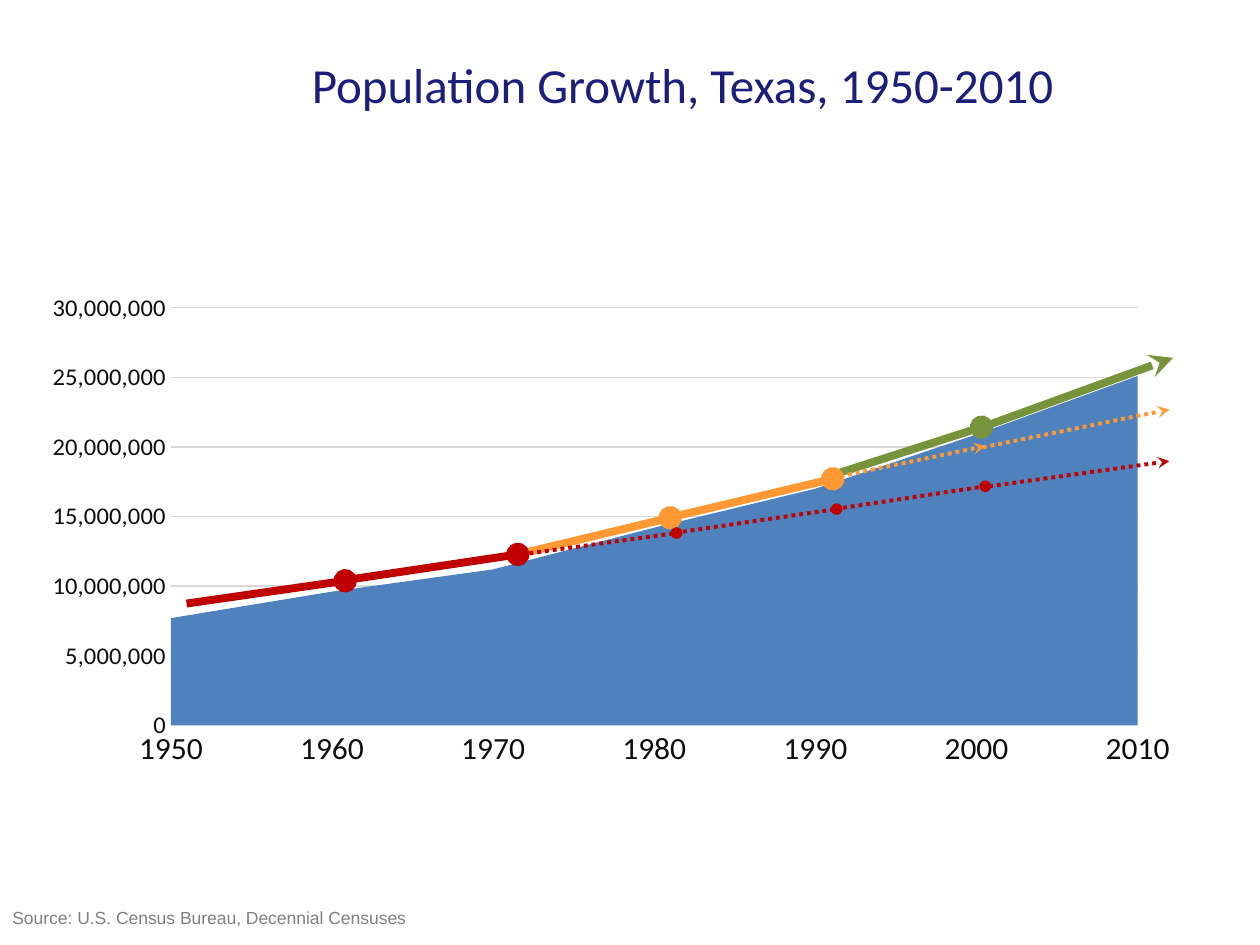
"""Build the Texas population growth slide with its area chart and trend lines."""
import pptx
import pptx.chart.data
import pptx.dml.color
import pptx.enum.chart
import pptx.enum.dml
import pptx.enum.shapes
import pptx.enum.text
import pptx.oxml
import pptx.oxml.ns
import pptx.util

Pt = pptx.util.Pt

TITLE = "Population Growth, Texas, 1950-2010"
SOURCE = "Source: U.S. Census Bureau, Decennial Censuses"
POPULATION = {
    "1950": 7700000, "1960": 9600000, "1970": 11200000, "1980": 14200000,
    "1990": 17000000, "2000": 20900000, "2010": 25100000,
}
PLOT_AREA = {"x": 0.104, "y": 0.049, "w": 0.853, "h": 0.885}
RED, ORANGE, GREEN = "C00000", "FF9933", "77933C"
GRID, AXIS_TEXT = "D9D9D9", "0D0D0D"
ACTUAL = {"width": Pt(4.5)}
PROJECTED = {"width": Pt(2.25), "dash_style": pptx.enum.dml.MSO_LINE.ROUND_DOT}
TRENDS = [
    (RED, ACTUAL, "oval", (106.6, 344.9), (197.3, 331.9)),
    (ORANGE, ACTUAL, "oval", (295.9, 316.8), (383, 295.9)),
    (RED, ACTUAL, "oval", (199.4, 331.2), (295.9, 316.8)),
    (GREEN, ACTUAL, "oval", (475.9, 271.4), (560.9, 244.1)),
    (ORANGE, ACTUAL, "oval", (388.1, 294.5), (475.9, 273.6)),
    (GREEN, ACTUAL, "stealth", (559.4, 244.8), (670.3, 204.5)),
    (RED, PROJECTED, "oval", (298.1, 316.8), (386.6, 304.6)),
    (RED, PROJECTED, "oval", (390.2, 303.8), (478.1, 290.9)),
    (RED, PROJECTED, "oval", (481.7, 290.2), (563, 277.9)),
    (RED, PROJECTED, "stealth", (565.2, 277.9), (668.2, 263.5)),
    (ORANGE, PROJECTED, "stealth", (480.2, 272.2), (563, 254.9)),
    (ORANGE, PROJECTED, "stealth", (561.6, 255.6), (668.2, 234)),
]


def apply(target, values):
    for attribute, value in values.items():
        setattr(target, attribute, value)


def paint(color_holder, color):
    color_holder.rgb = pptx.dml.color.RGBColor.from_string(color)


def style_font(font, name, size, color):
    apply(font, {"name": name, "size": Pt(size), "bold": False})
    paint(font.color, color)


def place(shape, left, top, width, height):
    apply(shape, {"left": Pt(left), "top": Pt(top), "width": Pt(width), "height": Pt(height)})


def style_line(line, color, values):
    line.fill.solid()
    paint(line.fill.fore_color, color)
    apply(line, values)


def add_title(slide):
    title = slide.shapes.title
    place(title, 120, 24, 540, 48)
    title.text_frame.text = TITLE
    title.text_frame.vertical_anchor = pptx.enum.text.MSO_ANCHOR.MIDDLE
    heading = title.text_frame.paragraphs[0]
    heading.alignment = pptx.enum.text.PP_ALIGN.CENTER
    style_font(heading.runs[0].font, "Calibri", 28, "1B1E7A")


def set_plot_area(chart):
    sizes = "".join(f'<c:{key} val="{value}"/>' for key, value in PLOT_AREA.items())
    layout = pptx.oxml.parse_xml(
        f'<c:layout {pptx.oxml.ns.nsdecls("c")}><c:manualLayout><c:layoutTarget val="inner"/>'
        f'<c:xMode val="edge"/><c:yMode val="edge"/>{sizes}</c:manualLayout></c:layout>')
    plot_area = chart._chartSpace.chart.plotArea
    for default in plot_area.findall(pptx.oxml.ns.qn("c:layout")):
        plot_area.remove(default)
    plot_area.insert(0, layout)
    for crossing in plot_area.iter(pptx.oxml.ns.qn("c:crossBetween")):
        crossing.set("val", "midCat")


def add_population_chart(slide):
    data = pptx.chart.data.CategoryChartData(number_format="#,##0")
    data.categories = list(POPULATION)
    data.add_series("Series 1", list(POPULATION.values()))
    chart = slide.shapes.add_chart(
        pptx.enum.chart.XL_CHART_TYPE.AREA, Pt(30), Pt(162.7), Pt(648), Pt(275.8), data).chart
    apply(chart, {"has_legend": False, "has_title": False})
    style_font(chart.font, "Calibri", 20, "000000")
    chart.plots[0].vary_by_categories = False
    area = chart.plots[0].series[0].format.fill
    area.solid()
    paint(area.fore_color, "4F81BD")

    no_tick = pptx.enum.chart.XL_TICK_MARK.NONE
    years, people = chart.category_axis, chart.value_axis
    for axis, size in ((years, 18), (people, 14)):
        apply(axis, {"major_tick_mark": no_tick, "minor_tick_mark": no_tick})
        style_font(axis.tick_labels.font, "Calibri", size, AXIS_TEXT)
    years.has_major_gridlines = False
    apply(people, {"minimum_scale": 0, "maximum_scale": 30000000,
                   "major_unit": 5000000, "has_major_gridlines": True})
    apply(people.tick_labels, {"number_format": "#,##0", "number_format_is_linked": False})
    people.format.line.fill.background()
    for rule in (years, people.major_gridlines):
        style_line(rule.format.line, GRID, {"width": Pt(0.75)})
    set_plot_area(chart)


def add_trend(slide, color, values, tail, start, end):
    trend = slide.shapes.add_connector(
        pptx.enum.shapes.MSO_CONNECTOR.STRAIGHT, *map(Pt, start + end))
    style_line(trend.line, color, values)
    namespace = pptx.oxml.ns.nsdecls("a")
    trend.line._get_or_add_ln().append(
        pptx.oxml.parse_xml(f'<a:tailEnd {namespace} type="{tail}"/>'))
    trend._element.spPr.append(pptx.oxml.parse_xml(f"<a:effectLst {namespace}/>"))


def add_source(slide):
    source = slide.shapes.add_textbox(Pt(0), Pt(514.8), Pt(360), Pt(19.4))
    source.text_frame.word_wrap = True
    source.text_frame.text = SOURCE
    style_font(source.text_frame.paragraphs[0].runs[0].font, "Arial", 10, "808080")


def main():
    deck = pptx.Presentation()
    apply(deck, {"slide_width": Pt(720), "slide_height": Pt(540)})
    slide = deck.slides.add_slide(deck.slide_layouts[5])
    add_title(slide)
    add_population_chart(slide)
    for trend in TRENDS:
        add_trend(slide, *trend)
    add_source(slide)
    deck.save("out.pptx")


if __name__ == "__main__":
    main()
